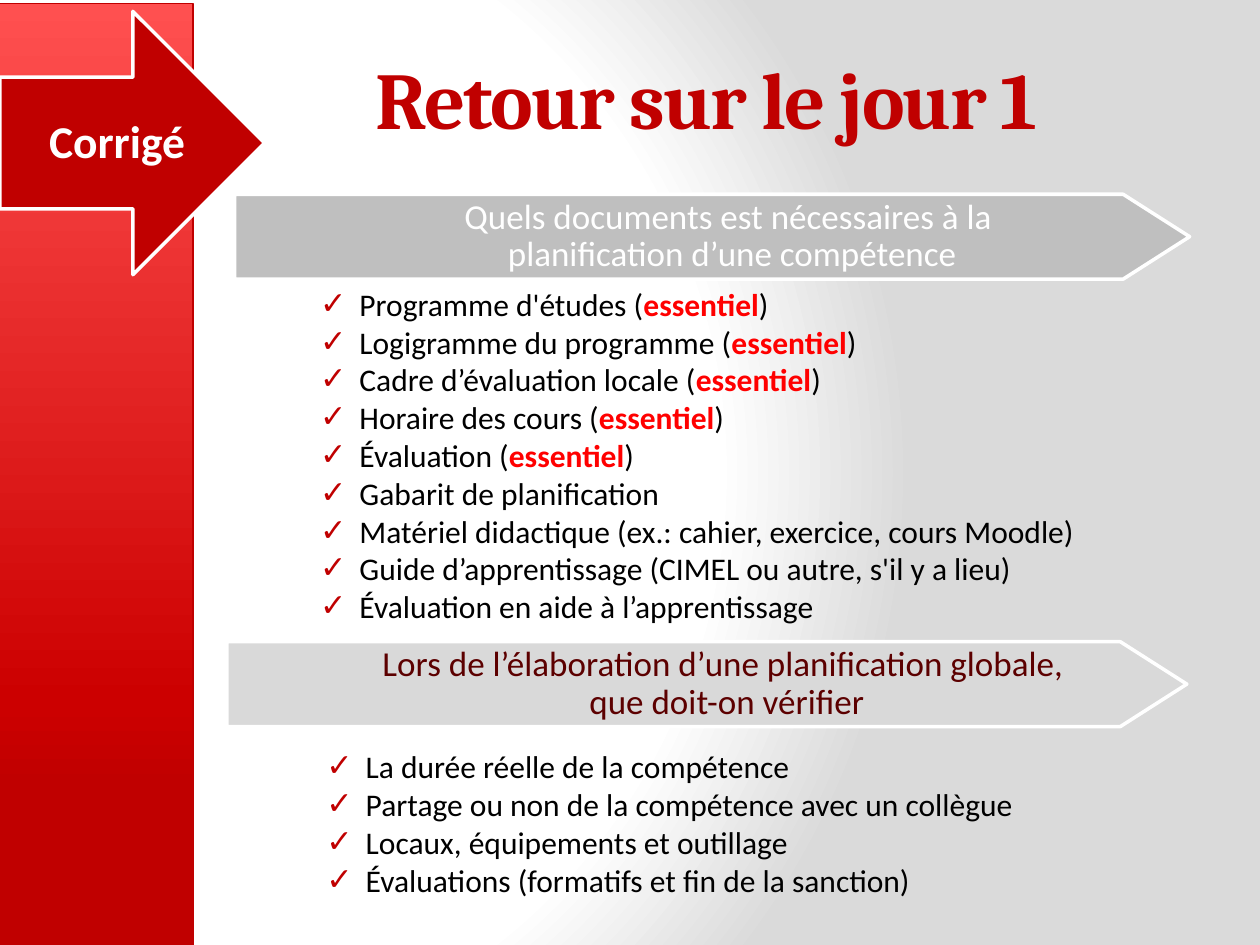
from dataclasses import dataclass

from lxml import etree
from pptx import Presentation
from pptx.dml.color import RGBColor
from pptx.enum.shapes import MSO_SHAPE
from pptx.enum.text import MSO_ANCHOR, MSO_AUTO_SIZE, PP_ALIGN
from pptx.oxml import parse_xml
from pptx.oxml.ns import qn
from pptx.util import Pt

CENTER, LEFT = PP_ALIGN.CENTER, PP_ALIGN.LEFT
MIDDLE, TOP = MSO_ANCHOR.MIDDLE, MSO_ANCHOR.TOP
NO_FIT = MSO_AUTO_SIZE.NONE
RECTANGLE, RIGHT_ARROW = MSO_SHAPE.RECTANGLE, MSO_SHAPE.RIGHT_ARROW
DRAWING = "http://schemas.openxmlformats.org/drawingml/2006/main"
RED, WHITE, BLACK, BRIGHT_RED = "C00000", "FFFFFF", "000000", "FF0000"
BANNER_HEIGHT, BANNER_TIP = 48.5, 38
BULLET_INDENT = 22.5

TITLE_FORMAT = {"name": "Cambria", "size": Pt(46), "bold": True}
LABEL_FORMAT = {"name": "Calibri", "size": Pt(26), "bold": True}
BANNER_FORMAT = {"name": "Calibri", "size": Pt(20), "bold": False}
ITEM_FORMAT = {"name": "Calibri", "size": Pt(18), "bold": False}
ESSENTIAL_FORMAT = {**ITEM_FORMAT, "bold": True}


@dataclass
class Area:
    left: float
    top: float
    width: float
    height: float

    def lengths(self) -> tuple:
        return Pt(self.left), Pt(self.top), Pt(self.width), Pt(self.height)


@dataclass
class Banner:
    left: float
    top: float
    width: float
    fill: str
    color: str
    text: str


@dataclass
class Item:
    text: str
    essential: bool = False


BANNERS = [
    Banner(134, 111, 545.8, "BFBFBF", WHITE,
           "Quels documents est nécessaires à la \vplanification d’une compétence"),
    Banner(129.6, 366.7, 548.6, "D9D9D9", "5C0000",
           "Lors de l’élaboration d’une planification globale, \vque doit-on vérifier"),
]
DOCUMENTS = [
    Item("Programme d'études", True),
    Item("Logigramme du programme", True),
    Item("Cadre d’évaluation locale", True),
    Item("Horaire des cours", True),
    Item("Évaluation", True),
    Item("Gabarit de planification"),
    Item("Matériel didactique (ex.: cahier, exercice, cours Moodle)"),
    Item("Guide d’apprentissage (CIMEL ou autre, s'il y a lieu)"),
    Item("Évaluation en aide à l’apprentissage"),
]
CHECKS = [
    Item("La durée réelle de la compétence"),
    Item("Partage ou non de la compétence avec un collègue"),
    Item("Locaux, équipements et outillage"),
    Item("Évaluations (formatifs et fin de la sanction)"),
]


def paint(target, color: str) -> None:
    """Colour a font, or give a fill one solid colour."""
    if hasattr(target, "solid"):
        target.solid()
        target.fore_color.rgb = RGBColor.from_string(color)
    else:
        target.color.rgb = RGBColor.from_string(color)


def set_gradient(holder, stops: list, direction: str) -> None:
    """Replace the gradient found inside an element."""
    stop_xml = "".join(
        f'<a:gs pos="{percent * 1000}"><a:srgbClr val="{color}"/></a:gs>'
        for percent, color in stops)
    gradient = holder.find(".//" + qn("a:gradFill"))
    gradient.getparent().replace(gradient, parse_xml(
        f'<a:gradFill xmlns:a="{DRAWING}" rotWithShape="1">'
        f"<a:gsLst>{stop_xml}</a:gsLst>{direction}</a:gradFill>"))


def outline(shape, color: str, width: float) -> None:
    shape.shadow.inherit = False
    paint(shape.line.fill, color)
    shape.line.width = Pt(width)


def add_span(para, text: str, formats: dict, color: str):
    span = para.add_run()
    span.text = text
    for name, value in formats.items():
        setattr(span.font, name, value)
    paint(span.font, color)
    return span


def write_lines(para, text: str, formats: dict, color: str) -> None:
    for index, line in enumerate(text.split("\v")):
        if index:
            para.add_line_break()
        add_span(para, line, formats, color)
    para.alignment = CENTER


def place(box, area: Area, anchor) -> None:
    box.left, box.top, box.width, box.height = area.lengths()
    frame = box.text_frame
    frame.word_wrap, frame.auto_size, frame.vertical_anchor = True, NO_FIT, anchor


def add_banner(page, banner: Banner) -> None:
    right, bottom = banner.left + banner.width, banner.top + BANNER_HEIGHT
    shoulder = right - BANNER_TIP
    points = [(shoulder, bottom), (right, banner.top + BANNER_HEIGHT / 2),
              (shoulder, banner.top), (banner.left, banner.top)]
    builder = page.shapes.build_freeform(Pt(banner.left), Pt(bottom))
    builder.add_line_segments([(Pt(x), Pt(y)) for x, y in points], close=True)
    shape = builder.convert_to_shape()
    paint(shape.fill, banner.fill)
    outline(shape, WHITE, 2)
    frame = shape.text_frame
    frame.word_wrap, frame.vertical_anchor = True, MIDDLE
    frame.margin_left, frame.margin_right = Pt(34.5), Pt(11.5)
    frame.margin_top = frame.margin_bottom = Pt(5.75)
    para = frame.paragraphs[0]
    para.line_spacing = 0.9
    write_lines(para, banner.text, BANNER_FORMAT, banner.color)


def add_check_mark(para) -> None:
    properties = para._p.get_or_add_pPr()
    properties.set("marL", str(Pt(BULLET_INDENT)))
    properties.set("indent", str(-Pt(BULLET_INDENT)))
    color = etree.SubElement(properties, qn("a:buClr"))
    etree.SubElement(color, qn("a:srgbClr"), val=RED)
    etree.SubElement(properties, qn("a:buFont"), typeface="Calibri")
    etree.SubElement(properties, qn("a:buChar"), char="✓")


def fill_list(box, area: Area, items: list) -> None:
    place(box, area, TOP)
    frame = box.text_frame
    for index, item in enumerate(items):
        para = frame.add_paragraph() if index else frame.paragraphs[0]
        add_check_mark(para)
        para.alignment, para.space_before = LEFT, Pt(0)
        if item.essential:
            add_span(para, item.text + " (", ITEM_FORMAT, BLACK)
            add_span(para, "essentiel", ESSENTIAL_FORMAT, BRIGHT_RED)
            add_span(para, ")", ITEM_FORMAT, BLACK)
        else:
            add_span(para, item.text, ITEM_FORMAT, BLACK)


def main() -> None:
    deck = Presentation()
    deck.slide_width, deck.slide_height = Pt(720), Pt(540)
    page = deck.slides.add_slide(deck.slide_layouts[3])
    title, documents, checks = page.placeholders

    # Background
    page.background.fill.gradient()
    set_gradient(page.element, [(0, WHITE), (75, WHITE), (100, "DADADA")],
                 '<a:path path="circle"><a:fillToRect l="20000" t="50000" '
                 'r="100000" b="50000"/></a:path>')

    # Red side bar, behind everything else
    bar = page.shapes.add_shape(RECTANGLE, *Area(-11.5, 2, 121.8, 540).lengths())
    bar.fill.gradient()
    set_gradient(bar._element,
                 [(0, "FF5050"), (74, "CC0000"), (83, RED), (100, RED)],
                 '<a:lin ang="5400000" scaled="0"/>')
    outline(bar, RED, 1)
    title._element.addprevious(bar._element)

    # Title
    place(title, Area(131, 10.8, 545.8, 90), MIDDLE)
    para = title.text_frame.paragraphs[0]
    para.alignment = CENTER
    span = add_span(para, "Retour sur le jour 1", TITLE_FORMAT, RED)
    span._r.get_or_add_rPr().set("spc", "-100")

    # Questions and their answers
    for banner in BANNERS:
        add_banner(page, banner)
    fill_list(documents, Area(175.7, 159.1, 500.4, 225.4), DOCUMENTS)
    fill_list(checks, Area(179.3, 423.4, 500.4, 116.6), CHECKS)

    # Arrow and its label
    arrow = page.shapes.add_shape(RIGHT_ARROW, *Area(0, 6.5, 151.2, 150.5).lengths())
    paint(arrow.fill, RED)
    outline(arrow, WHITE, 2)
    area = Area(0, 61.2, 133.9, 38.9)
    label = page.shapes.add_textbox(*area.lengths())
    place(label, area, TOP)
    write_lines(label.text_frame.paragraphs[0], "Corrigé", LABEL_FORMAT, WHITE)

    deck.save("out.pptx")


if __name__ == "__main__":
    main()
